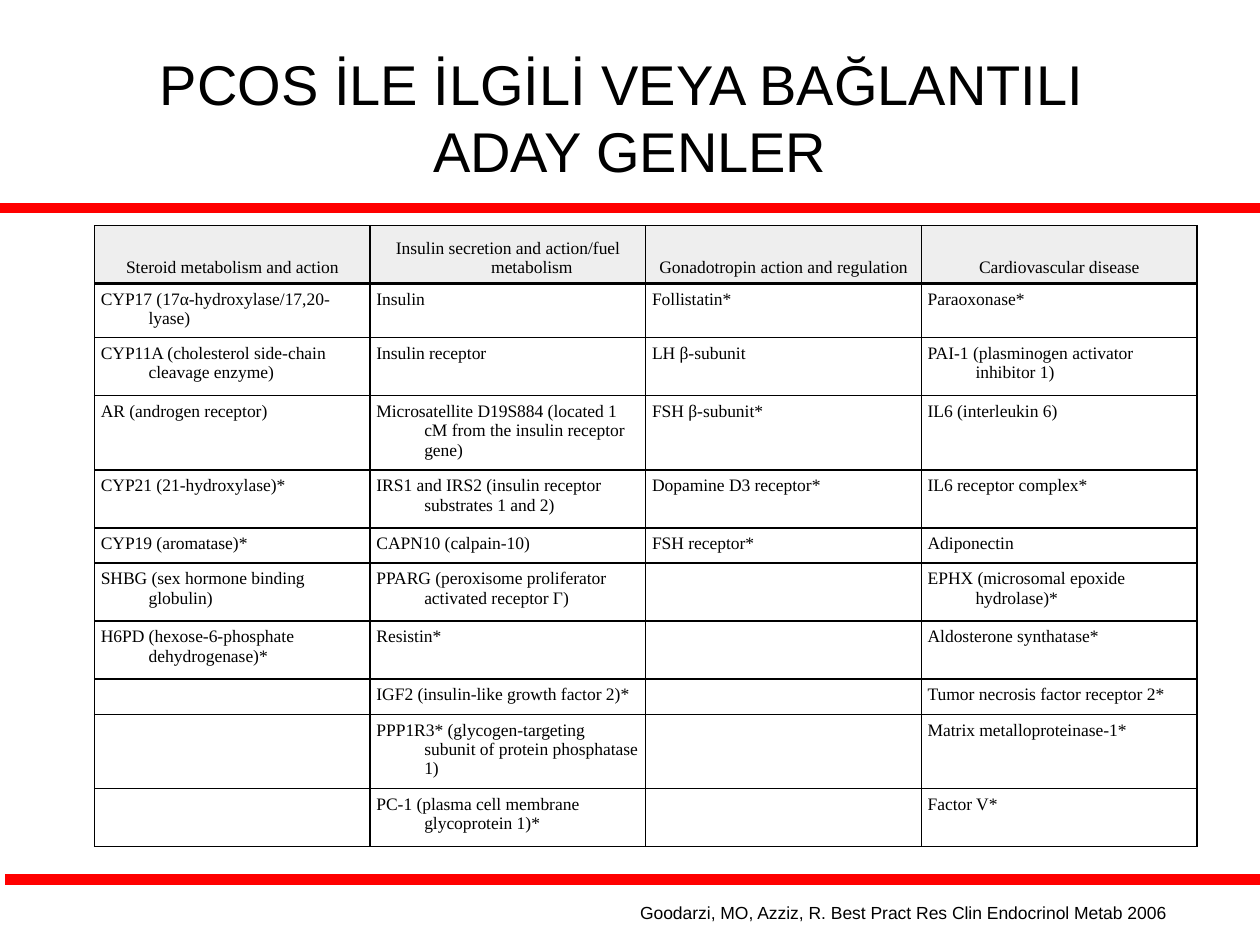
"""Builds a slide with a table of candidate genes for PCOS."""
from lxml import etree
from pptx import Presentation
from pptx.dml.color import RGBColor
from pptx.enum.shapes import MSO_CONNECTOR
from pptx.enum.text import MSO_ANCHOR, MSO_AUTO_SIZE, PP_ALIGN
from pptx.oxml.ns import qn
from pptx.util import Inches, Pt

STRAIGHT = MSO_CONNECTOR.STRAIGHT
TOP, MIDDLE, BOTTOM = MSO_ANCHOR.TOP, MSO_ANCHOR.MIDDLE, MSO_ANCHOR.BOTTOM
LEFT, CENTER = PP_ALIGN.LEFT, PP_ALIGN.CENTER
BLACK = RGBColor(0x00, 0x00, 0x00)
RED = RGBColor(0xFF, 0x00, 0x00)
HEADER_GREY = RGBColor(0xEE, 0xEE, 0xEE)

GENE_GROUPS = {
    "Steroid metabolism and action": [
        "CYP17 (17α-hydroxylase/17,20-lyase)",
        "CYP11A (cholesterol side-chain cleavage enzyme)",
        "AR (androgen receptor)",
        "CYP21 (21-hydroxylase)*",
        "CYP19 (aromatase)*",
        "SHBG (sex hormone binding globulin)",
        "H6PD (hexose-6-phosphate dehydrogenase)*",
    ],
    "Insulin secretion and action/fuel metabolism": [
        "Insulin",
        "Insulin receptor",
        "Microsatellite D19S884 (located 1 cM from the insulin receptor gene)",
        "IRS1 and IRS2 (insulin receptor substrates 1 and 2)",
        "CAPN10 (calpain-10)",
        "PPARG (peroxisome proliferator activated receptor Γ)",
        "Resistin*",
        "IGF2 (insulin-like growth factor 2)*",
        "PPP1R3* (glycogen-targeting subunit of protein phosphatase 1)",
        "PC-1 (plasma cell membrane glycoprotein 1)*",
    ],
    "Gonadotropin action and regulation": [
        "Follistatin*",
        "LH β-subunit",
        "FSH β-subunit*",
        "Dopamine D3 receptor*",
        "FSH receptor*",
    ],
    "Cardiovascular disease": [
        "Paraoxonase*",
        "PAI-1 (plasminogen activator inhibitor 1)",
        "IL6 (interleukin 6)",
        "IL6 receptor complex*",
        "Adiponectin",
        "EPHX (microsomal epoxide hydrolase)*",
        "Aldosterone synthatase*",
        "Tumor necrosis factor receptor 2*",
        "Matrix metalloproteinase-1*",
        "Factor V*",
    ],
}
ROW_HEIGHTS = [0.46, 0.43, 0.46, 0.59, 0.46, 0.28, 0.46, 0.46, 0.28, 0.59, 0.46]


def write_text(holder, text, font="Arial", size=10, align=LEFT, anchor=MIDDLE, margin=0.0):
    """Fill a text frame or table cell with one formatted paragraph."""
    frame = getattr(holder, "text_frame", holder)
    holder.margin_left = holder.margin_right = Inches(margin)
    holder.margin_top = holder.margin_bottom = Inches(margin)
    holder.vertical_anchor = anchor
    frame.text = text
    paragraph = frame.paragraphs[0]
    paragraph.alignment = align
    for run in paragraph.runs:
        run.font.name = font
        run.font.size = Pt(size)
        run.font.color.rgb = BLACK
    if not text:
        paragraph._p.get_or_add_endParaRPr().set("sz", str(size * 100))
    return paragraph


class SlideBuilder:
    """Holds the slide and the table style and adds each kind of element."""

    font = "Times New Roman"
    indent = Inches(0.38)

    def __init__(self, slide):
        self.slide = slide

    def title(self, text, left, top, width, height):
        title = self.slide.shapes.title
        title.left, title.top = Inches(left), Inches(top)
        title.width, title.height = Inches(width), Inches(height)
        title.text_frame.auto_size = MSO_AUTO_SIZE.NONE
        paragraph = write_text(title.text_frame, text, size=32, align=CENTER)
        paragraph.line_spacing = 1.0

    def rule(self, left, top, width):
        line = self.slide.shapes.add_connector(
            STRAIGHT, Inches(left), Inches(top), Inches(left + width), Inches(top))
        line.line.color.rgb = RED
        line.line.width = Pt(6)
        etree.SubElement(line._element.spPr, qn("a:effectLst"))

    def caption(self, text, left, top, width, height):
        box = self.slide.shapes.add_textbox(
            Inches(left), Inches(top), Inches(width), Inches(height))
        box.text_frame.word_wrap = False
        write_text(box.text_frame, text)

    def border(self, cell, side, width):
        properties = cell._tc.get_or_add_tcPr()
        line = etree.SubElement(properties, qn(f"a:ln{side}"), w=str(Pt(width)))
        fill = etree.SubElement(line, qn("a:solidFill"))
        etree.SubElement(fill, qn("a:srgbClr"), val=str(BLACK))

    def cell(self, cell, text, header, widths):
        paragraph = write_text(
            cell, text, font=self.font, margin=0.05,
            align=CENTER if header else LEFT, anchor=BOTTOM if header else TOP)
        properties = paragraph._p.get_or_add_pPr()
        properties.set("marL", str(self.indent))
        properties.set("indent", str(-self.indent))
        for side, width in widths.items():
            self.border(cell, side, width)
        if header:
            cell.fill.solid()
            cell.fill.fore_color.rgb = HEADER_GREY
        else:
            cell.fill.background()

    def table(self, groups, heights, left, top, width):
        table = self.slide.shapes.add_table(
            len(heights), len(groups), Inches(left), Inches(top),
            Inches(width), Inches(sum(heights))).table
        table.first_row = table.horz_banding = False
        for row, height in zip(table.rows, heights):
            row.height = Inches(height)
        for column, (heading, genes) in enumerate(groups.items()):
            texts = [heading] + genes
            texts += [""] * (len(heights) - len(texts))
            for row, text in enumerate(texts):
                widths = {
                    "L": 1,
                    "R": 0.75 if column == len(groups) - 1 else 1,
                    "T": {0: 0.75, 1: 2}.get(row, 1),
                    "B": 2 if row == 0 else 1,
                }
                self.cell(table.cell(row, column), text, row == 0, widths)


def main():
    presentation = Presentation()
    presentation.slide_width, presentation.slide_height = Inches(10), Inches(7.5)
    builder = SlideBuilder(presentation.slides.add_slide(presentation.slide_layouts[5]))
    builder.rule(0, 1.65, 10)
    builder.rule(0.04, 6.98, 10)
    builder.title("PCOS İLE İLGİLİ VEYA BAĞLANTILI \vADAY GENLER", 0.5, 0.3, 9, 1.25)
    builder.table(GENE_GROUPS, ROW_HEIGHTS, 0.75, 1.79, 8.75)
    builder.caption("Goodarzi, MO, Azziz, R. Best Pract Res Clin Endocrinol Metab 2006",
                    5.08, 7.17, 4.24, 0.15)
    presentation.save("out.pptx")


if __name__ == "__main__":
    main()
